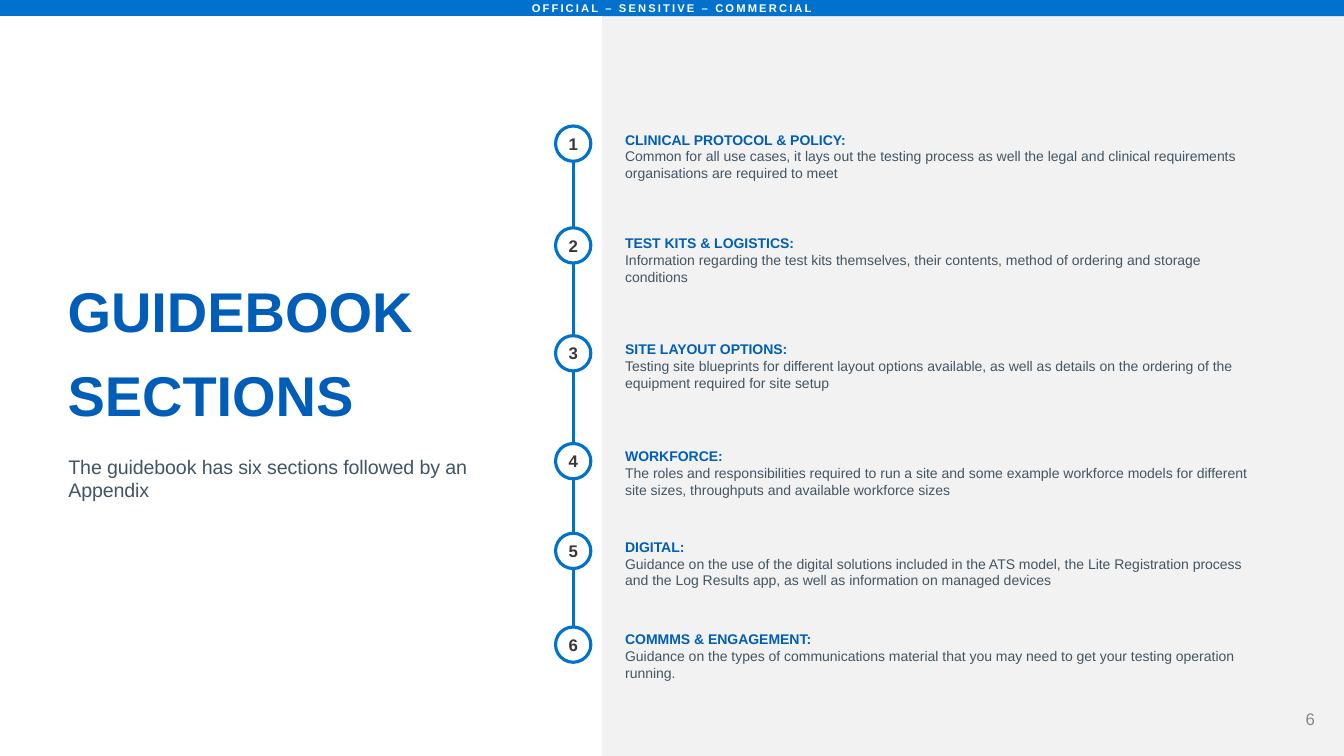
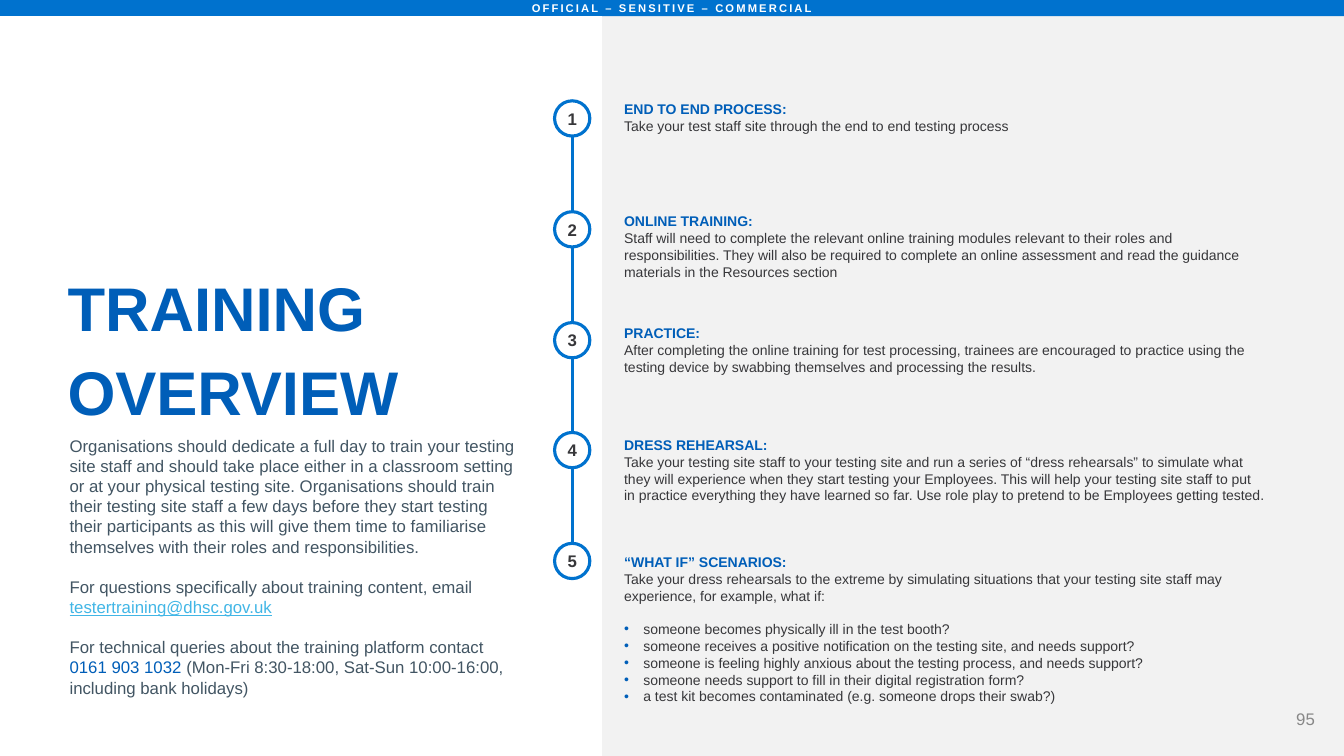
from lxml import etree
from pptx import Presentation
from pptx import util as u
from pptx.dml.color import RGBColor
from pptx.enum import shapes, text
from pptx.oxml import ns

FONT = "Arial"
BRIGHT_BLUE = RGBColor(0x00, 0x72, 0xCE)
HEADING_BLUE = RGBColor(0x00, 0x5E, 0xB8)
LINK_BLUE = RGBColor(0x41, 0xB6, 0xE6)
SLATE = RGBColor(0x42, 0x55, 0x63)
CHARCOAL = RGBColor(0x37, 0x37, 0x3A)
GREY = RGBColor(0x88, 0x88, 0x88)
PALE_GREY = RGBColor(0xF2, 0xF2, 0xF2)
WHITE = RGBColor(0xFF, 0xFF, 0xFF)

SLIDE_WIDTH, SLIDE_HEIGHT = 13.33, 7.5
BAND_HEIGHT = 0.16
PANEL_WIDTH = 5.97
MARKER_SIZE = 0.35
ITEM_OFFSET = 0.69  # from a marker's left edge to its text
ITEM_SIZE = (6.45, 0.6)
LINE_WEIGHT = 2.25

# Each step: marker top, text top, heading, body
GUIDEBOOK_STEPS = [
    (1.25, 1.3, "CLINICAL PROTOCOL & POLICY:",
     "Common for all use cases, it lays out the testing process as well the legal and clinical "
     "requirements organisations are required to meet"),
    (2.26, 2.33, "TEST KITS & LOGISTICS:",
     "Information regarding the test kits themselves, their contents, method of ordering and "
     "storage conditions"),
    (3.33, 3.38, "SITE LAYOUT OPTIONS:",
     "Testing site blueprints for different layout options available, as well as details on the "
     "ordering of the equipment required for site setup"),
    (4.4, 4.44, "WORKFORCE:",
     "The roles and responsibilities required to run a site and some example workforce models "
     "for different site sizes, throughputs and available workforce sizes"),
    (5.29, 5.34, "DIGITAL:",
     "Guidance on the use of the digital solutions included in the ATS model, the Lite "
     "Registration process and the Log Results app, as well as information on managed devices"),
    (6.22, 6.26, "COMMMS & ENGAGEMENT:",
     "Guidance on the types of communications material that you may need to get your testing "
     "operation running."),
]
TRAINING_STEPS = [
    (1, 1, "END TO END PROCESS:",
     "Take your test staff site through the end to end testing process"),
    (2.1, 2.11, "ONLINE TRAINING:",
     "Staff will need to complete the relevant online training modules relevant to their roles "
     "and responsibilities. They will also be required to complete an online assessment and "
     "read the guidance materials in the Resources section"),
    (3.2, 3.22, "PRACTICE:",
     "After completing the online training for test processing, trainees are encouraged to "
     "practice using the testing device by swabbing themselves and processing the results."),
    (4.29, 4.33, "DRESS REHEARSAL:",
     "Take your testing site staff to your testing site and run a series of “dress rehearsals” "
     "to simulate what they will experience when they start testing your Employees. This will "
     "help your testing site staff to put in practice everything they have learned so far. Use "
     "role play to pretend to be Employees getting tested."),
    (5.39, 5.49, "“WHAT IF” SCENARIOS:",
     "Take your dress rehearsals to the extreme by simulating situations that your testing site "
     "staff may experience, for example, what if:"),
]
SCENARIOS = [
    "someone becomes physically ill in the test booth?",
    "someone receives a positive notification on the testing site, and needs support?",
    "someone is feeling highly anxious about the testing process, and needs support?",
    "someone needs support to fill in their digital registration form?",
    "a test kit becomes contaminated (e.g. someone drops their swab?)",
]


def add_span(para, words, size, color, bold=False, underline=False, tracking=0):
    """Append formatted text; tracking is letter spacing in points."""
    span = para.add_run()
    span.text = words
    font = span.font
    font.name, font.size, font.bold = FONT, u.Pt(size), bold
    font.color.rgb = color
    if underline:
        font.underline = True
    if tracking:
        font._element.set("spc", str(round(tracking * 100)))


def add_para(frame, words, size, color, align=None, before=0, leading=None, bullet=False, **style):
    """Write into the frame's empty first paragraph, or append a new one."""
    para = frame.paragraphs[0]
    if para.runs:
        para = frame.add_paragraph()
    if bullet:
        add_bullet(para)
    if align is not None:
        para.alignment = align
    if before:
        para.space_before = u.Pt(before)
    if leading:
        para.line_spacing = u.Pt(leading)
    add_span(para, words, size, color, **style)
    return para


def add_bullet(para):
    props = para._p.get_or_add_pPr()
    indent = u.Inches(0.19)
    props.set("marL", str(indent))
    props.set("indent", str(-indent))
    tint = etree.SubElement(props, ns.qn("a:buClr"))
    etree.SubElement(tint, ns.qn("a:srgbClr"), val=str(HEADING_BLUE))
    etree.SubElement(props, ns.qn("a:buFont"), typeface=FONT)
    etree.SubElement(props, ns.qn("a:buChar"), char="•")


def set_frame(frame, insets, anchor):
    frame.word_wrap = True
    frame.vertical_anchor = anchor
    (frame.margin_left, frame.margin_top,
     frame.margin_right, frame.margin_bottom) = map(u.Inches, insets)
    return frame


def add_box(page, left, top, width, height, insets=(0.1, 0.05, 0.1, 0.05),
            anchor=text.MSO_ANCHOR.TOP):
    """Add a text box and return its text frame."""
    box = page.shapes.add_textbox(*map(u.Inches, (left, top, width, height)))
    return set_frame(box.text_frame, insets, anchor)


def add_panel(page, kind, left, top, width, height, fill, line=None, insets=(0, 0, 0, 0)):
    """Add a filled shape and return its text frame."""
    panel = page.shapes.add_shape(kind, *map(u.Inches, (left, top, width, height)))
    panel.shadow.inherit = False
    panel.fill.solid()
    panel.fill.fore_color.rgb = fill
    if line is None:
        panel.line.fill.background()
    else:
        panel.line.color.rgb = line
        panel.line.width = u.Pt(LINE_WEIGHT)
    return set_frame(panel.text_frame, insets, text.MSO_ANCHOR.MIDDLE)


def add_page(deck, title, title_size, number):
    """Add a slide with the band, white panel, title and page number."""
    page = deck.slides.add_slide(deck.slide_layouts[6])
    rectangle = shapes.MSO_SHAPE.RECTANGLE
    footer = add_box(page, 12.08, 6.76, 1.06, 0.74, (0.1, 0.04, 0.1, 0.04),
                     text.MSO_ANCHOR.MIDDLE)
    add_para(footer, str(number), 12, GREY, align=text.PP_ALIGN.RIGHT)
    band = add_panel(page, rectangle, 0, 0, SLIDE_WIDTH, BAND_HEIGHT, BRIGHT_BLUE,
                     insets=(0, 0.04, 0, 0.04))
    add_para(band, "OFFICIAL – SENSITIVE – COMMERCIAL", 8, WHITE,
             align=text.PP_ALIGN.CENTER, bold=True, tracking=1.5)
    add_panel(page, rectangle, 0, BAND_HEIGHT, PANEL_WIDTH, SLIDE_HEIGHT - BAND_HEIGHT, WHITE)
    heading = add_box(page, 0, 0, PANEL_WIDTH, SLIDE_HEIGHT, (0.67, 0.3, 0.39, 0.98),
                      text.MSO_ANCHOR.MIDDLE)
    add_para(heading, title, title_size, HEADING_BLUE, leading=60, bold=True)
    return page


def add_timeline(page, left, steps, body_color):
    """Draw numbered markers on a line, and return the last step's text frame."""
    radius = MARKER_SIZE / 2
    start, end = steps[0][0] + radius, steps[-1][0] + radius
    line = page.shapes.add_connector(
        shapes.MSO_CONNECTOR.STRAIGHT,
        *map(u.Inches, (left + radius, start, left + radius, end)))
    line.line.color.rgb = BRIGHT_BLUE
    line.line.width = u.Pt(LINE_WEIGHT)
    etree.SubElement(line._element.spPr, ns.qn("a:effectLst"))

    for number, (marker_top, item_top, heading, body) in enumerate(steps, 1):
        marker = add_panel(page, shapes.MSO_SHAPE.OVAL, left, marker_top,
                           MARKER_SIZE, MARKER_SIZE, WHITE, BRIGHT_BLUE)
        add_para(marker, str(number), 12, CHARCOAL, align=text.PP_ALIGN.CENTER, bold=True)
        item = add_box(page, left + ITEM_OFFSET, item_top, *ITEM_SIZE, (0, 0, 0.1, 0.05))
        add_para(item, heading, 10, HEADING_BLUE, bold=True)
        add_para(item, body, 10, body_color)
    return item


def add_guidebook_page(deck):
    page = add_page(deck, "GUIDEBOOK SECTIONS", 40, 6)
    intro = add_box(page, 0.58, 4.46, 4.75, 0.57)
    add_para(intro, "The guidebook has six sections followed by an Appendix", 14, SLATE,
             tracking=-0.1)
    add_timeline(page, 5.51, GUIDEBOOK_STEPS, SLATE)


def add_training_page(deck):
    page = add_page(deck, "TRAINING OVERVIEW", 44, 95)
    scenarios = add_timeline(page, 5.5, TRAINING_STEPS, CHARCOAL)
    for index, scenario in enumerate(SCENARIOS):
        add_para(scenarios, scenario, 10, CHARCOAL, before=0 if index else 12, bullet=True)

    intro = add_box(page, 0.69, 4.32, 4.56, 2.7, (0, 0, 0.1, 0))
    add_para(intro, "Organisations should dedicate a full day to train your testing site staff "
             "and should take place either in a classroom setting or at your physical testing "
             "site. Organisations should train their testing site staff a few days before they "
             "start testing their participants as this will give them time to familiarise "
             "themselves with their roles and responsibilities.", 12, SLATE)
    add_para(intro, "For questions specifically about training content, email", 12, SLATE,
             before=14.4)
    add_para(intro, "testertraining@dhsc.gov.uk", 12, LINK_BLUE, underline=True)
    contact = add_para(intro, "For technical queries about the training platform contact ",
                       12, SLATE, before=14.4)
    add_span(contact, "0161 903 1032 ", 12, HEADING_BLUE)
    add_span(contact, "(Mon-Fri 8:30-18:00, Sat-Sun 10:00-16:00, including bank holidays)",
             12, SLATE)


def main():
    deck = Presentation()
    deck.slide_width, deck.slide_height = u.Inches(SLIDE_WIDTH), u.Inches(SLIDE_HEIGHT)
    backdrop = deck.slide_master.background.fill
    backdrop.solid()
    backdrop.fore_color.rgb = PALE_GREY
    add_guidebook_page(deck)
    add_training_page(deck)
    deck.save("out.pptx")


if __name__ == "__main__":
    main()
